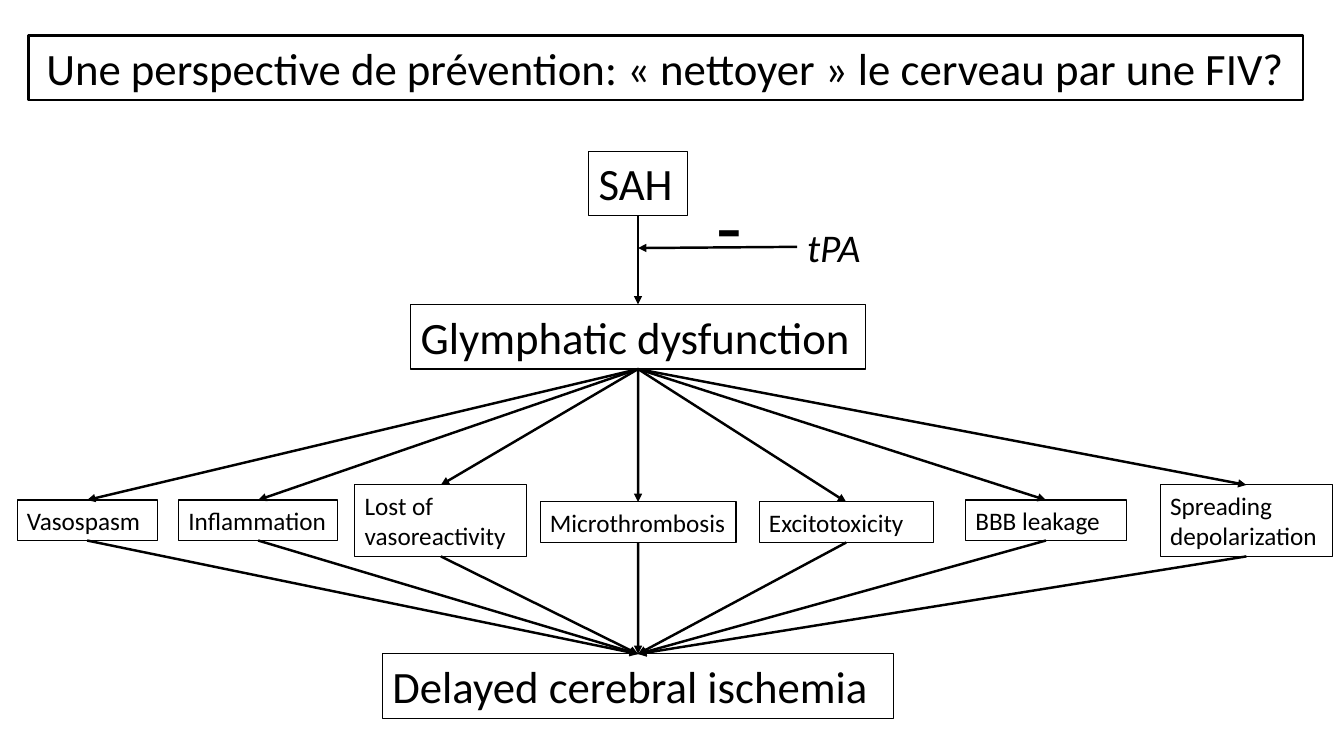
import pptx
import pptx.util
import pptx.enum.shapes
import pptx.enum.text
import pptx.dml.color
import pptx.oxml
import pptx.oxml.ns

Cm, Pt = pptx.util.Cm, pptx.util.Pt

# Content; lengths in cm
TITLE = "Une perspective de prévention: « nettoyer » le cerveau par une FIV?"
STAGES = [  # text, top, width
    ("SAH", 3.81, 2.49),
    ("Glymphatic dysfunction", 7.67, 11.46),
    ("Delayed cerebral ischemia", 16.48, 12.88),
]
EFFECTS = [  # text, left, top, width, height
    ("Vasospasm", 0.43, 12.6, 3.53, 1.02),
    ("Inflammation", 4.5, 12.6, 4.01, 1.02),
    ("Lost of vasoreactivity", 8.94, 12.22, 4.34, 1.8),
    ("Microthrombosis", 13.61, 12.65, 4.94, 1.02),
    ("Excitotoxicity", 19.13, 12.65, 4.39, 1.02),
    ("BBB leakage", 24.33, 12.6, 4.06, 1.02),
    ("Spreading depolarization", 29.24, 12.22, 4.34, 1.8),
]
COLORS = {"ink": "000000"}
FONT = "Calibri"
AXIS = 16.08
TALL = 1.63
INK = pptx.dml.color.RGBColor.from_string(COLORS["ink"])

deck = pptx.Presentation()
deck.slide_width, deck.slide_height = Cm(33.87), Cm(19.05)
slide = deck.slides.add_slide(deck.slide_layouts[6])


def write(shape, text, size, align="LEFT", italic=False):
    frame = shape.text_frame
    frame.word_wrap = True
    frame.vertical_anchor = pptx.enum.text.MSO_ANCHOR.TOP
    frame.text = text
    para = frame.paragraphs[0]
    para.alignment = getattr(pptx.enum.text.PP_ALIGN, align)
    font = para.runs[0].font
    font.name, font.size, font.italic = FONT, Pt(size), italic
    font.color.rgb = INK


def box(text, left, top, width, height, size, align="LEFT", line=0.75):
    shape = slide.shapes.add_shape(
        pptx.enum.shapes.MSO_SHAPE.RECTANGLE,
        Cm(left), Cm(top), Cm(width), Cm(height))
    shape.shadow.inherit = False
    shape.fill.background()
    shape.line.color.rgb = INK
    shape.line.width = Pt(line)
    write(shape, text, size, align)
    return shape


def label(text, left, top, width, height, size, italic=False):
    shape = slide.shapes.add_textbox(Cm(left), Cm(top), Cm(width), Cm(height))
    write(shape, text, size, italic=italic)


def arrow(start, end):
    link = slide.shapes.add_connector(
        pptx.enum.shapes.MSO_CONNECTOR.STRAIGHT, *start, *end)
    link.line.color.rgb = INK
    link.line.width = Pt(1.75)
    tail = pptx.oxml.parse_xml(
        f'<a:tailEnd {pptx.oxml.ns.nsdecls("a")} type="triangle"/>')
    link.line._get_or_add_ln().append(tail)
    props = link._element.spPr
    props.append(pptx.oxml.parse_xml(
        f'<a:effectLst {pptx.oxml.ns.nsdecls("a")}/>'))
    return link


def join(upper, lower):
    """Arrow from the bottom centre of one box to the top centre of another."""
    link = arrow((upper.left, upper.top), (lower.left, lower.top))
    link.begin_connect(upper, 2)
    link.end_connect(lower, 0)


# Title
box(TITLE, 0.71, 0.89, 32.13, TALL, 32, "CENTER", 2)

# Main stages, centred on one axis
bleed, clog, harm = [
    box(text, AXIS - width / 2, top, width, TALL, 32)
    for text, top, width in STAGES]
join(bleed, clog)

# Effects, fanned out and back in
for effect in EFFECTS:
    step = box(*effect, 18)
    join(clog, step)
    join(step, harm)

# Inhibition by tPA
label("tPA", 20.09, 5.49, 1.96, 1.45, 28, italic=True)
arrow((Cm(20.09), Cm(6.22)), (Cm(AXIS), Cm(6.25)))
label("-", 17.81, 4.24, 1.02, 2.82, 60)

deck.save("out.pptx")
